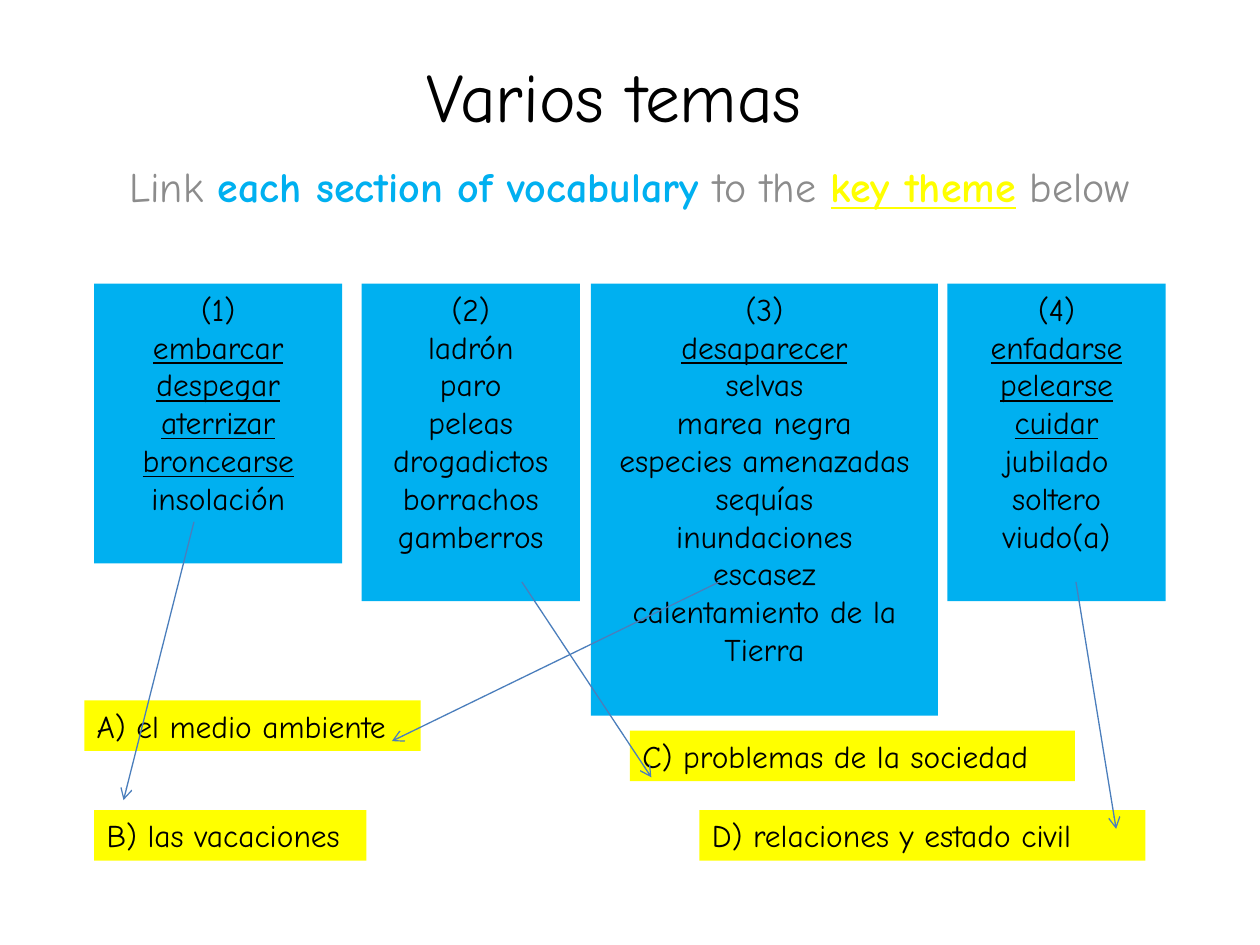
import pptx
import pptx.dml.color
import pptx.enum.shapes
import pptx.enum.text
import pptx.oxml
import pptx.oxml.ns
import pptx.util
from pptx.util import Cm

COLOURS = {
    "black": "000000",
    "grey": "8C8C8C",
    "blue": "00B0F0",
    "yellow": "FFFF00",
    "arrow": "4B7EBC",
}
CENTRE = pptx.enum.text.PP_ALIGN.CENTER
LEFT = pptx.enum.text.PP_ALIGN.LEFT
TOP = pptx.enum.text.MSO_ANCHOR.TOP
MIDDLE = pptx.enum.text.MSO_ANCHOR.MIDDLE


def colour(name):
    return pptx.dml.color.RGBColor.from_string(COLOURS[name])


def apply_format(target, values):
    for name, value in values.items():
        setattr(target, name, value)


def add_span(para, text, size, ink="black", **values):
    span = para.add_run()
    span.text = text
    span.font.color.rgb = colour(ink)
    apply_format(span.font, {"name": "Comic Neue", "size": pptx.util.Pt(size), **values})


def add_heading(page, box, spans, size, anchor, space=0):
    heading = page.shapes.add_textbox(*map(Cm, box))
    apply_format(heading.text_frame, {"word_wrap": True, "vertical_anchor": anchor})
    para = heading.text_frame.paragraphs[0]
    apply_format(para, {"alignment": CENTRE, "space_before": pptx.util.Pt(space)})
    for text, values in spans:
        add_span(para, text, size, **values)


def add_panel(page, box, fill, lines, alignment, underlined=()):
    panel = page.shapes.add_shape(
        pptx.enum.shapes.MSO_SHAPE.RECTANGLE, *map(Cm, box))
    panel.shadow.inherit = False
    panel.fill.solid()
    panel.fill.fore_color.rgb = colour(fill)
    panel.line.fill.background()
    frame = panel.text_frame
    apply_format(frame, {"word_wrap": True, "vertical_anchor": TOP})
    for index, line in enumerate(lines):
        para = frame.add_paragraph() if index else frame.paragraphs[0]
        para.alignment = alignment
        add_span(para, line, 18, underline=line in underlined)


def add_vocabulary(page, top, sections):
    for number, (left, width, height, words, verbs) in enumerate(sections, 1):
        lines = [f"({number})", *words]
        add_panel(page, (left, top, width, height), "blue", lines, CENTRE, words[:verbs])


def add_themes(page, height, themes):
    for left, top, width, text in themes:
        add_panel(page, (left, top, width, height), "yellow", [text], LEFT)


def add_links(page, links):
    for ends in links:
        link = page.shapes.add_connector(
            pptx.enum.shapes.MSO_CONNECTOR.STRAIGHT, *map(Cm, ends))
        link.line.color.rgb = colour("arrow")
        link.line.width = pptx.util.Pt(0.75)
        tail = pptx.oxml.ns.qn("a:tailEnd")
        link.line._get_or_add_ln().makeelement(tail)
        outline = link.line._get_or_add_ln()
        outline.append(outline.makeelement(tail, {"type": "arrow"}))
        properties = link._element.spPr
        properties.append(properties.makeelement(pptx.oxml.ns.qn("a:effectLst")))


def main():
    deck = pptx.Presentation()
    apply_format(deck, {"slide_width": Cm(25.4), "slide_height": Cm(19.05)})
    page = deck.slides.add_slide(deck.slide_layouts[6])

    add_heading(page, (0.89, 0.91, 22.99, 2.01), [("Varios temas", {})], 39.6, MIDDLE)
    add_heading(page, (0.89, 3.12, 23.6, 1.8), [
        ("Link ", {"ink": "grey"}),
        ("each section of vocabulary ", {"ink": "blue", "bold": True}),
        ("to the ", {"ink": "grey"}),
        ("key theme", {"ink": "yellow", "bold": True, "underline": True}),
        (" below", {"ink": "grey"}),
    ], 24, TOP, space=4.8)

    add_vocabulary(page, 5.72, [
        (1.9, 5, 5.64,
         ["embarcar", "despegar", "aterrizar", "broncearse", "insolación"], 4),
        (7.29, 4.4, 6.4,
         ["ladrón", "paro", "peleas", "drogadictos", "borrachos", "gamberros"], 0),
        (11.91, 7, 8.71,
         ["desaparecer", "selvas", "marea negra", "especies amenazadas", "sequías",
          "inundaciones", "escasez", "calentamiento de la Tierra"], 1),
        (19.1, 4.4, 6.4,
         ["enfadarse", "pelearse", "cuidar", "jubilado", "soltero", "viudo(a)"], 3),
    ])
    add_themes(page, 1.02, [
        (1.7, 14.12, 6.78, "A) el medio ambiente"),
        (1.9, 16.33, 5.49, "B) las vacaciones"),
        (12.7, 14.73, 8.97, "C) problemas de la sociedad"),
        (14.1, 16.33, 8.99, "D) relaciones y estado civil"),
    ])
    add_links(page, [
        (3.91, 10.52, 2.49, 16.13),
        (14.5, 11.73, 7.9, 14.94),
        (10.52, 11.73, 13.13, 15.67),
        (21.69, 11.73, 22.5, 16.71),
    ])
    deck.save("out.pptx")


if __name__ == "__main__":
    main()
